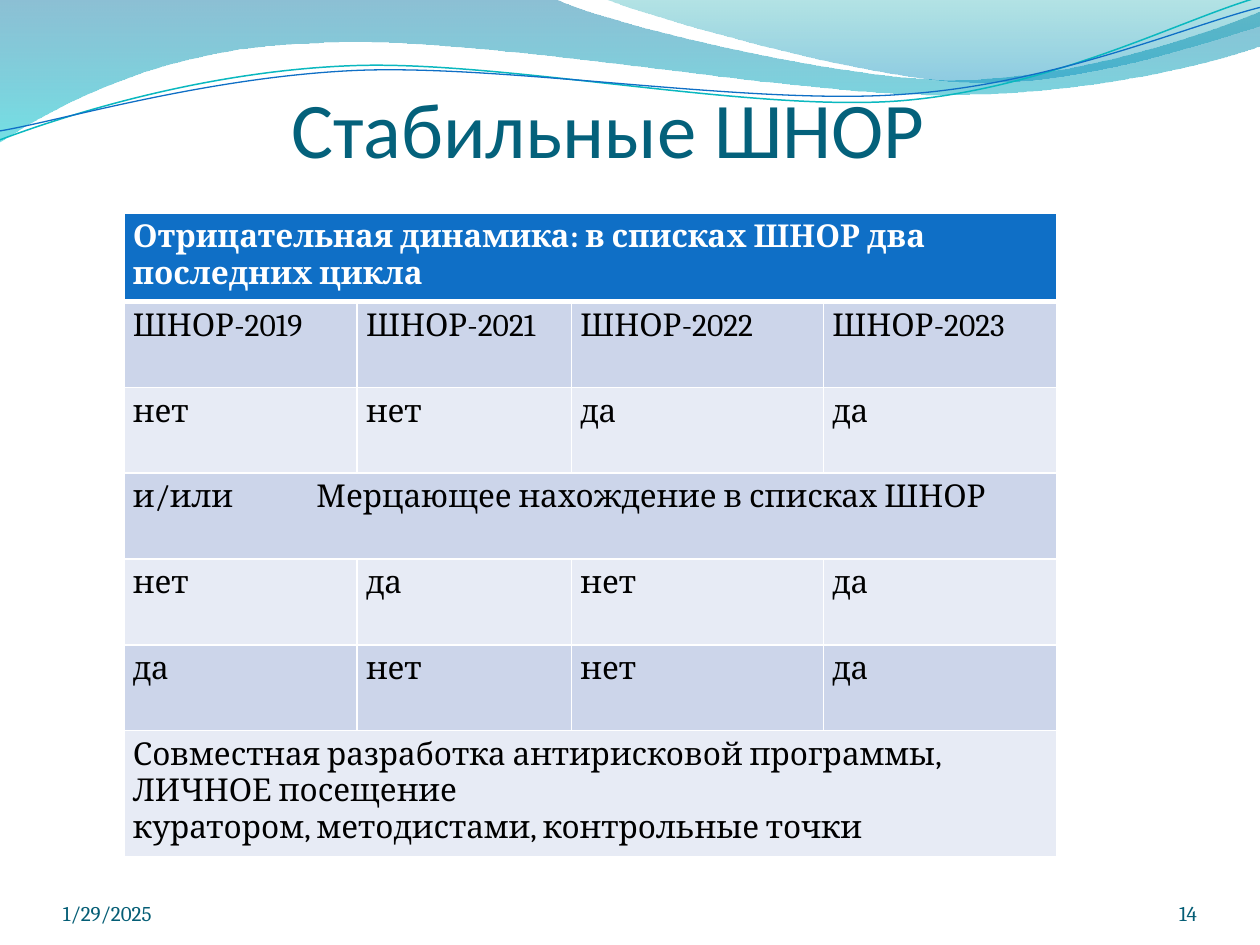
from lxml import etree
from pptx import Presentation
from pptx import util as u
from pptx.dml.color import RGBColor
from pptx.enum import text
from pptx.oxml.ns import qn
from pptx.util import Cm

COLORS = {
    "title": "04617B", "footer": "045D75", "header": "0F6FC6",
    "band dark": "CCD5EA", "band light": "E7EBF5",
    "white": "FFFFFF", "black": "000000", "teal": "0AB8BF",
    "deep blue": "0074A1", "aqua": "00C6CF", "sea": "00A1A9", "azure": "008BBF",
}


def write(paragraph, words, size, color, font="Cambria", bold=False):
    run = paragraph.add_run()
    run.text = words
    run.font.size, run.font.name, run.font.bold = u.Pt(size), font, bold
    run.font.color.rgb = RGBColor.from_string(COLORS[color])


prs = Presentation()
prs.slide_width, prs.slide_height = Cm(25.4), Cm(19.05)
slide = prs.slides.add_slide(prs.slide_layouts[5])

# Waves along the top: start, segments (1 point straight, 3 points curved),
# gradient stops (colour, opacity), line (colour, width), rotation
waves = [
    ((0, 0),
     [[(11.18, -0.03)],
      [(12.09, 0.43), (16.87, 1.6), (19.25, 1.6)],
      [(21.67, 1.6), (24.33, 0.66), (25.4, 0.23)],
      [(25.43, 0.91)],
      [(24.97, 1.12), (22.1, 1.93), (18.95, 1.91)],
      [(15.8, 1.91), (9.7, 0.71), (6.53, 0.86)],
      [(3.28, 0.91), (1.17, 2.11), (-0.03, 2.87)],
      [(0, 0)]],
     [("deep blue", 45), ("aqua", 55)], None, 0),
    ((12.17, -0.03),
     [[(12.93, 0.28), (17.32, 1.57), (19.53, 1.65)],
      [(21.74, 1.75), (24.41, 0.81), (25.4, 0.53)],
      [(25.4, 0)],
      [(12.17, -0.03)]],
     [("sea", 30), ("azure", 45)], None, 0),
    ((-0.05, 2.22),
     [[(1.19, 1.82), (4.02, 1.04), (7.05, 1.06)],
      [(10.05, 1.07), (15.02, 2.37), (18.08, 2.29)],
      [(21.13, 2.2), (23.87, 0.91), (25.41, 0.55)]],
     None, ("teal", 0.85), 357.3),
    ((-0.04, 2.04),
     [[(1.16, 1.9), (4.18, 1.15), (7.2, 1.16)],
      [(10.25, 1.18), (15.13, 2.25), (18.19, 2.16)],
      [(21.21, 2.1), (23.93, 1.06), (25.45, 0.75)]],
     None, ("header", 0.75), 357.3),
]
for start, segments, gradient, line, rotation in waves:
    outline = slide.shapes.build_freeform(Cm(start[0]), Cm(start[1]))
    outline.add_line_segments([(Cm(x), Cm(y)) for segment in segments for x, y in segment],
                              close=gradient is not None)
    wave = outline.convert_to_shape()
    wave.shadow.inherit = False
    wave.rotation = rotation

    # Turn each run of three points into one Bezier curve
    steps = iter(list(wave._element.iter(qn("a:lnTo"))))
    for segment in segments:
        step = next(steps)
        if len(segment) == 3:
            curve = etree.Element(qn("a:cubicBezTo"))
            step.addprevious(curve)
            for part in (step, next(steps), next(steps)):
                curve.append(part[0])
                part.getparent().remove(part)

    if gradient:
        wave.line.fill.background()
        wave.fill.gradient()
        wave.fill.gradient_angle = 270
        for stop, position, (color, opacity) in zip(wave.fill.gradient_stops, (0, 1), gradient):
            stop.position = position
            stop.color.rgb = RGBColor.from_string(COLORS[color])
        for tint, (color, opacity) in zip(wave._element.iter(qn("a:srgbClr")), gradient):
            etree.SubElement(tint, qn("a:alpha"), val=str(opacity * 1000))
    else:
        wave.fill.background()
        wave.line.color.rgb = RGBColor.from_string(COLORS[line[0]])
        wave.line.width = u.Pt(line[1])

# Title, in front of the waves
title = slide.shapes.title
slide.shapes._spTree.append(title._element)
title.left, title.top, title.width, title.height = Cm(2.22), Cm(1.4), Cm(20.07), Cm(2.11)
frame = title.text_frame
frame.margin_left = frame.margin_right = frame.margin_bottom = 0
frame.margin_top = Cm(0.13)
frame.vertical_anchor = text.MSO_ANCHOR.BOTTOM
frame.paragraphs[0].alignment = text.PP_ALIGN.CENTER
write(frame.paragraphs[0], "Стабильные ШНОР", 45, "title", "Calibri")

# Date and slide number
for words, left, width, alignment in [
    ("1/29/2025", 1.27, 5.93, text.PP_ALIGN.LEFT),
    ("14", 22.01, 2.12, text.PP_ALIGN.RIGHT),
]:
    frame = slide.shapes.add_textbox(Cm(left), Cm(17.65), Cm(width), Cm(1.01)).text_frame
    frame.word_wrap = True
    frame.margin_left = frame.margin_right = frame.margin_top = frame.margin_bottom = 0
    frame.vertical_anchor = text.MSO_ANCHOR.BOTTOM
    frame.paragraphs[0].alignment = alignment
    write(frame.paragraphs[0], words, 12, "footer")

# Table: a row with one entry spans all columns
rows = [
    ["Отрицательная динамика: в списках ШНОР два последних цикла"],
    ["ШНОР-2019", "ШНОР-2021", "ШНОР-2022", "ШНОР-2023"],
    ["нет", "нет", "да", "да"],
    ["и/или\tМерцающее нахождение в списках ШНОР"],
    ["нет", "да", "нет", "да"],
    ["да", "нет", "нет", "да"],
    ["Совместная разработка антирисковой программы, ЛИЧНОЕ посещение\n"
     "куратором, методистами, контрольные точки"],
]
column_widths = [4.7, 4.32, 5.08, 4.7]
row_height = 1.73
table = slide.shapes.add_table(len(rows), len(column_widths), Cm(2.5), Cm(4.3),
                               Cm(sum(column_widths)), Cm(row_height * len(rows))).table
for column, width in zip(table.columns, column_widths):
    column.width = Cm(width)
for r, entries in enumerate(rows):
    table.rows[r].height = Cm(row_height)
    if len(entries) == 1:
        table.cell(r, 0).merge(table.cell(r, len(column_widths) - 1))
    band = "header" if r == 0 else "band dark" if r % 2 else "band light"
    for c, entry in enumerate(entries):
        cell = table.cell(r, c)
        cell.fill.solid()
        cell.fill.fore_color.rgb = RGBColor.from_string(COLORS[band])
        cell.margin_left = cell.margin_right = Cm(0.18)
        for i, words in enumerate(entry.split("\n")):
            paragraph = cell.text_frame.add_paragraph() if i else cell.text_frame.paragraphs[0]
            write(paragraph, words, 18, "black" if r else "white", bold=r == 0)
            if "\t" in words:
                tabs = etree.SubElement(paragraph._p.get_or_add_pPr(), qn("a:tabLst"))
                etree.SubElement(tabs, qn("a:tab"), pos=str(Cm(3.7)), algn="l")

# Thick white rule under the header row
for cell in table.rows[0].cells:
    rule = etree.Element(qn("a:lnB"), w=str(u.Pt(3)))
    ink = etree.SubElement(rule, qn("a:solidFill"))
    etree.SubElement(ink, qn("a:srgbClr"), val=COLORS["white"])
    cell._tc.get_or_add_tcPr().insert(0, rule)

prs.save("out.pptx")
